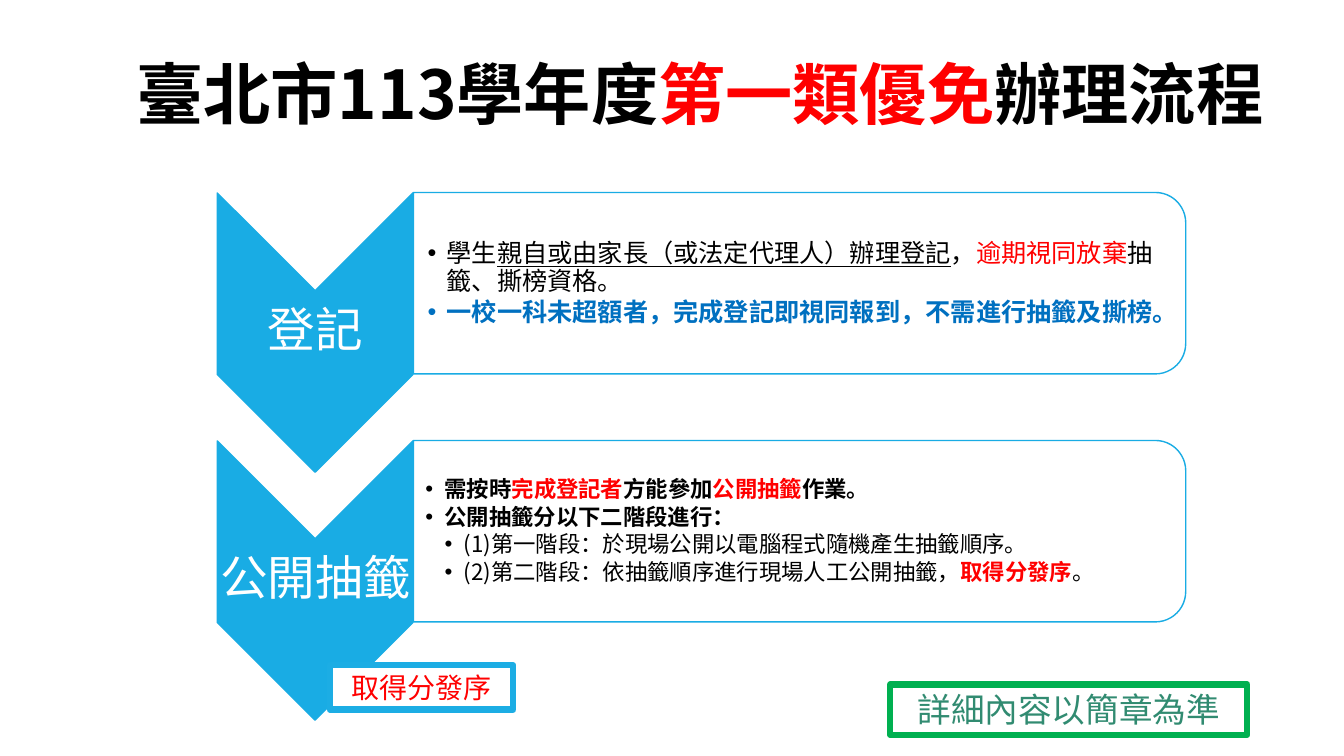
"""Build the slide on the first-category fee-exempt admission process."""
import pptx
import pptx.util
import pptx.dml.color
import pptx.enum.shapes
import pptx.enum.text
import pptx.oxml.ns
from lxml import etree

Inches = pptx.util.Inches
Pt = pptx.util.Pt
SHAPE = pptx.enum.shapes.MSO_SHAPE
ANCHOR = pptx.enum.text.MSO_ANCHOR
AUTO_SIZE = pptx.enum.text.MSO_AUTO_SIZE
CENTER = pptx.enum.text.PP_ALIGN.CENTER
qn = pptx.oxml.ns.qn

COLORS = {
    "black": "000000", "white": "FFFFFF", "red": "FF0000", "blue": "0070C0",
    "sky": "19ACE4", "frame": "1CADE4", "green": "00B050", "teal": "318B71",
}
CJK = "Noto Sans CJK TC"


def add_run(paragraph, text, size, color="black", bold=False, underline=False, font=CJK):
    """Append one formatted run to the paragraph."""
    run = paragraph.add_run()
    run.text = text
    run.font.size = Pt(size)
    run.font.bold = bold
    run.font.underline = underline
    run.font.color.rgb = pptx.dml.color.RGBColor.from_string(COLORS[color])
    run.font.name = font
    east_asian = etree.Element(qn("a:ea"), typeface=CJK)
    run.font._element.find(qn("a:latin")).addnext(east_asian)


def add_shape(slide, kind, box, fill, line, width):
    """Add a filled, outlined preset shape without a shadow."""
    shape = slide.shapes.add_shape(kind, *[Inches(value) for value in box])
    shape.shadow.inherit = False
    shape.fill.solid()
    shape.fill.fore_color.rgb = pptx.dml.color.RGBColor.from_string(COLORS[fill])
    shape.line.color.rgb = pptx.dml.color.RGBColor.from_string(COLORS[line])
    shape.line.width = Pt(width)
    return shape


presentation = pptx.Presentation()
presentation.slide_width = Inches(13.33)
presentation.slide_height = Inches(7.5)
slide = presentation.slides.add_slide(presentation.slide_layouts[5])

title = slide.shapes.title
title.left, title.top = Inches(1.16), Inches(0.35)
title.width, title.height = Inches(11.56), Inches(1.23)
title.text_frame.auto_size = AUTO_SIZE.NONE
title.text_frame.word_wrap = True
title.text_frame.vertical_anchor = ANCHOR.MIDDLE
paragraph = title.text_frame.paragraphs[0]
paragraph.alignment = CENTER
paragraph.line_spacing = 0.9
for text, color in [("臺北市113學年度", "black"), ("第一類優免", "red"), ("辦理流程", "black")]:
    add_run(paragraph, text, 48, color, True)

steps = [
    ("登記", 18, 0.14, 2.7, [
        (1, "black", [("學生",), ("親自或由家長（或法定代理人）辦理登記", "black", False, True),
                      ("，",), ("逾期視同放棄", "red"), ("抽籤、撕榜資格。",)]),
        (1, "blue", [("一校一科未超額者，完成登記即視同報到，不需進行抽籤及撕榜。", "blue", True)]),
    ]),
    ("公開抽籤", 16, 0.12, 2.4, [
        (1, "black", [("需按時", "black", True), ("完成登記者", "red", True),
                      ("方能參加", "black", True), ("公開抽籤", "red", True),
                      ("作業。", "black", True)]),
        (1, "black", [("公開抽籤分以下二階段進行：", "black", True)]),
        (2, "black", [("(1)第一階段：於現場公開以電腦程式隨機產生抽籤順序。",)]),
        (2, "black", [("(2)第二階段：依抽籤順序進行現場人工公開抽籤，",),
                      ("取得分發序", "red", True), ("。",)]),
    ]),
]
for index, (label, size, inset, gap, items) in enumerate(steps):
    offset = index * 2.46
    chevron = add_shape(slide, SHAPE.CHEVRON, (1.74, 2.33 + offset, 2.77, 1.94), "sky", "sky", 1)
    chevron.rotation = 90

    label_box = slide.shapes.add_textbox(
        Inches(2.16), Inches(2.88 + offset), Inches(1.94), Inches(0.83))
    frame = label_box.text_frame
    frame.word_wrap = True
    frame.vertical_anchor = ANCHOR.MIDDLE
    frame.margin_left = frame.margin_right = Inches(0.02)
    frame.margin_top = frame.margin_bottom = Inches(0.02)
    paragraph = frame.paragraphs[0]
    paragraph.alignment = CENTER
    paragraph.line_spacing = 0.9
    add_run(paragraph, label, 34, "white", font="Lato")

    panel = add_shape(slide, SHAPE.ROUND_2_SAME_RECTANGLE,
                      (7.03, -1.02 + offset, 1.8, 7.66), "white", "sky", 1)
    panel.adjustments[0] = 0.167
    panel.adjustments[1] = 0
    panel.rotation = 90

    details = slide.shapes.add_textbox(
        Inches(4.1), Inches(2 + offset), Inches(7.58), Inches(1.63))
    frame = details.text_frame
    frame.word_wrap = True
    frame.vertical_anchor = ANCHOR.MIDDLE
    frame.margin_left = Inches(inset)
    frame.margin_right = frame.margin_top = frame.margin_bottom = Inches(0.01)
    for position, (level, bullet_color, runs) in enumerate(items):
        paragraph = frame.add_paragraph() if position else frame.paragraphs[0]
        paragraph.level = level
        properties = paragraph._p.get_or_add_pPr()
        properties.set("marL", str(Inches(0.19 * level)))
        properties.set("indent", str(Inches(-0.19)))
        bullet = etree.SubElement(properties, qn("a:buClr"))
        etree.SubElement(bullet, qn("a:srgbClr"), val=COLORS[bullet_color])
        etree.SubElement(properties, qn("a:buFont"), typeface="Arial")
        etree.SubElement(properties, qn("a:buChar"), char="•")
        paragraph.line_spacing = 0.9
        if position:
            paragraph.space_before = Pt(gap)
        for text, *style in runs:
            add_run(paragraph, text, size, *style)

notes = [
    ((3.27, 6.6, 1.82, 0.44), "frame", "取得分發序", 20, "red"),
    ((8.83, 6.79, 3.54, 0.5), "green", "詳細內容以簡章為準", 24, "teal"),
]
for box, line, text, size, color in notes:
    note = add_shape(slide, SHAPE.RECTANGLE, box, "white", line, 4.5)
    frame = note.text_frame
    frame.word_wrap = True
    frame.auto_size = AUTO_SIZE.SHAPE_TO_FIT_TEXT
    frame.vertical_anchor = ANCHOR.TOP
    paragraph = frame.paragraphs[0]
    paragraph.alignment = CENTER
    add_run(paragraph, text, size, color)

presentation.save("out.pptx")
